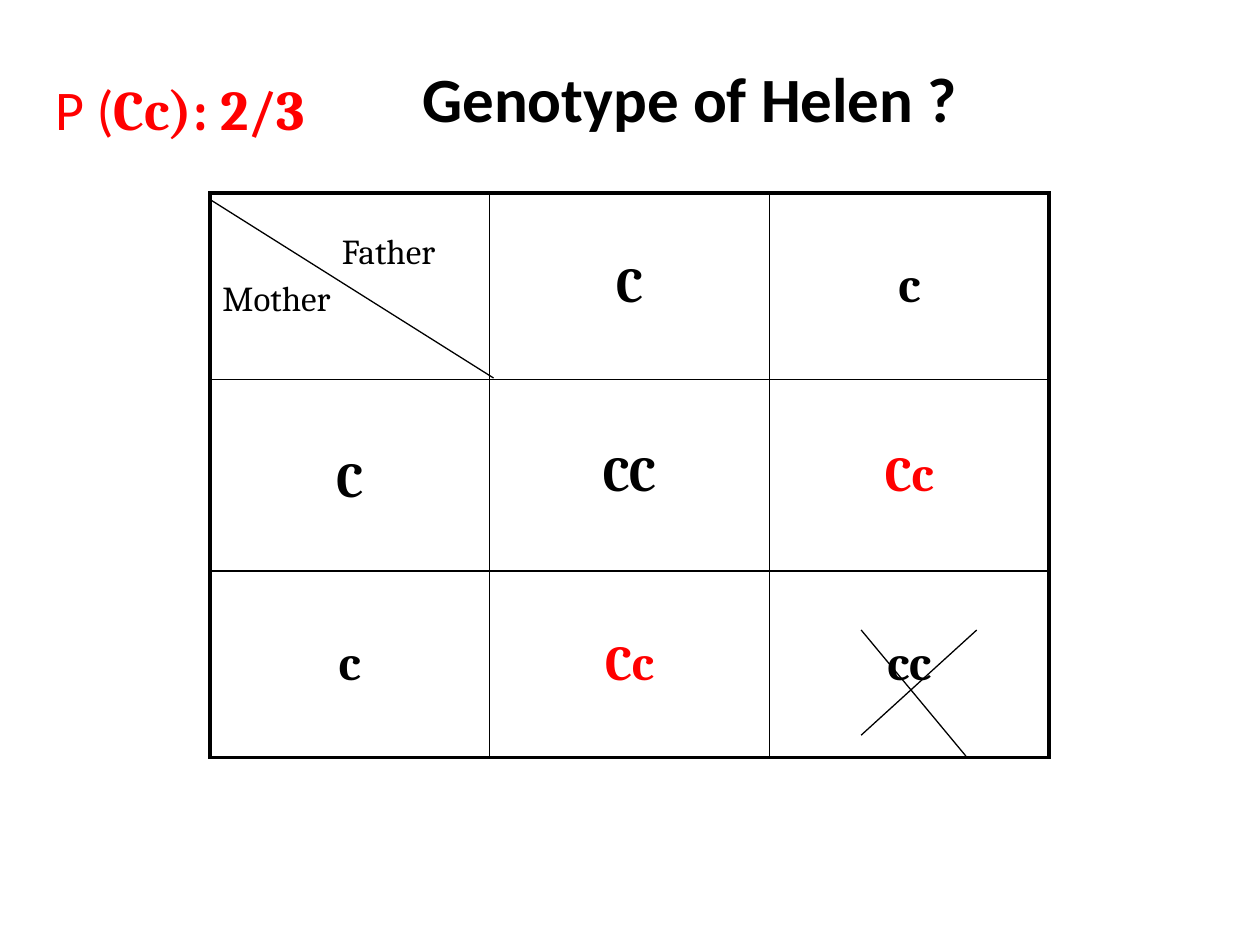
from dataclasses import dataclass

from lxml import etree
from pptx import Presentation
from pptx.dml.color import RGBColor
from pptx.enum.shapes import MSO_CONNECTOR
from pptx.enum.text import MSO_ANCHOR, MSO_AUTO_SIZE, PP_ALIGN
from pptx.oxml.ns import qn
from pptx.util import Cm, Pt

LINE = MSO_CONNECTOR.STRAIGHT
TOP, MIDDLE = MSO_ANCHOR.TOP, MSO_ANCHOR.MIDDLE
GROW = MSO_AUTO_SIZE.SHAPE_TO_FIT_TEXT
LEFT, CENTER = PP_ALIGN.LEFT, PP_ALIGN.CENTER


@dataclass(frozen=True)
class Theme:
    ink: RGBColor = RGBColor(0, 0, 0)
    red: RGBColor = RGBColor(255, 0, 0)
    sans: str = "Calibri"
    serif: str = "Cambria"
    title: Pt = Pt(36)
    odds: Pt = Pt(32)
    gene: Pt = Pt(28)
    label: Pt = Pt(20)
    outer: Pt = Pt(2.25)
    inner: Pt = Pt(1)
    thin: Pt = Pt(0.75)


theme = Theme()


def style(font, name, size, color, bold=False):
    font.name, font.size, font.bold = name, size, bold
    font.color.rgb = color


def border(cell, side, width):
    line = etree.SubElement(cell._tc.get_or_add_tcPr(), qn(f"a:ln{side}"), w=str(width))
    fill = etree.SubElement(line, qn("a:solidFill"))
    etree.SubElement(fill, qn("a:srgbClr"), val=str(theme.ink))


deck = Presentation()
deck.slide_width, deck.slide_height = Cm(25.4), Cm(19.05)
slide = deck.slides.add_slide(deck.slide_layouts[5])
shapes = slide.shapes

# Title
title = shapes.title
title.left, title.top, title.width, title.height = Cm(8.26), Cm(1.07), Cm(11.56), Cm(1.78)
frame = title.text_frame
frame.text = "Genotype of Helen ?"
frame.word_wrap, frame.auto_size = False, GROW
frame.vertical_anchor = TOP
para = frame.paragraphs[0]
para.alignment = LEFT
style(para.font, theme.sans, theme.title, theme.ink, True)

# Punnett square
genes = [
    ["", "C", "c"],
    ["C", "CC", "Cc"],
    ["c", "Cc", "cc"],
]
last = len(genes) - 1
grid = shapes.add_table(3, 3, Cm(4.23), Cm(3.89), Cm(16.92), Cm(11.38)).table
grid.first_row = grid.horz_banding = False
for col in grid.columns:
    col.width = Cm(5.64)
for row, height in zip(grid.rows, (3.76, 3.86, 3.76)):
    row.height = Cm(height)

for r, line in enumerate(genes):
    for c, gene in enumerate(line):
        cell = grid.cell(r, c)
        edges = {"L": c == 0, "R": c == last, "T": r == 0, "B": r == last}
        for side, edge in edges.items():
            border(cell, side, theme.outer if edge else theme.inner)
        cell.fill.background()
        if gene:
            cell.vertical_anchor = MIDDLE
            cell.text = gene
            para = cell.text_frame.paragraphs[0]
            para.alignment = CENTER
            color = theme.red if gene == "Cc" else theme.ink
            style(para.font, theme.serif, theme.gene, color, True)
grid.cell(1, 0).margin_top = Cm(0.38)

# Parent labels in the corner cell
corner = grid.cell(0, 0)
corner.margin_top = Cm(0.8)
corner.text = "Father\nMother"
father, mother = corner.text_frame.paragraphs
father._p.get_or_add_pPr().set("marL", str(Cm(2.41)))
mother.space_before = Pt(4)
for para in (father, mother):
    style(para.font, theme.serif, theme.label, theme.ink)

# Corner diagonal and the cross over cc
strokes = [
    (4.23, 4.02, 9.95, 7.62),
    (17.36, 12.7, 19.47, 15.24),
    (17.36, 14.82, 19.69, 12.7),
]
for ends in strokes:
    stroke = shapes.add_connector(LINE, *map(Cm, ends))
    stroke.line.color.rgb = theme.ink
    stroke.line.width = theme.thin
    etree.SubElement(stroke._element.spPr, qn("a:effectLst"))

# Probability of being a carrier
odds = shapes.add_textbox(Cm(0.86), Cm(1.37), Cm(5.79), Cm(2.39)).text_frame
odds.word_wrap, odds.auto_size = False, GROW
para = odds.paragraphs[0]
for text, name, bold in (("P (", theme.sans, False), ("Cc): 2/3", theme.serif, True)):
    run = para.add_run()
    run.text = text
    style(run.font, name, theme.odds, theme.red, bold)

deck.save("out.pptx")
